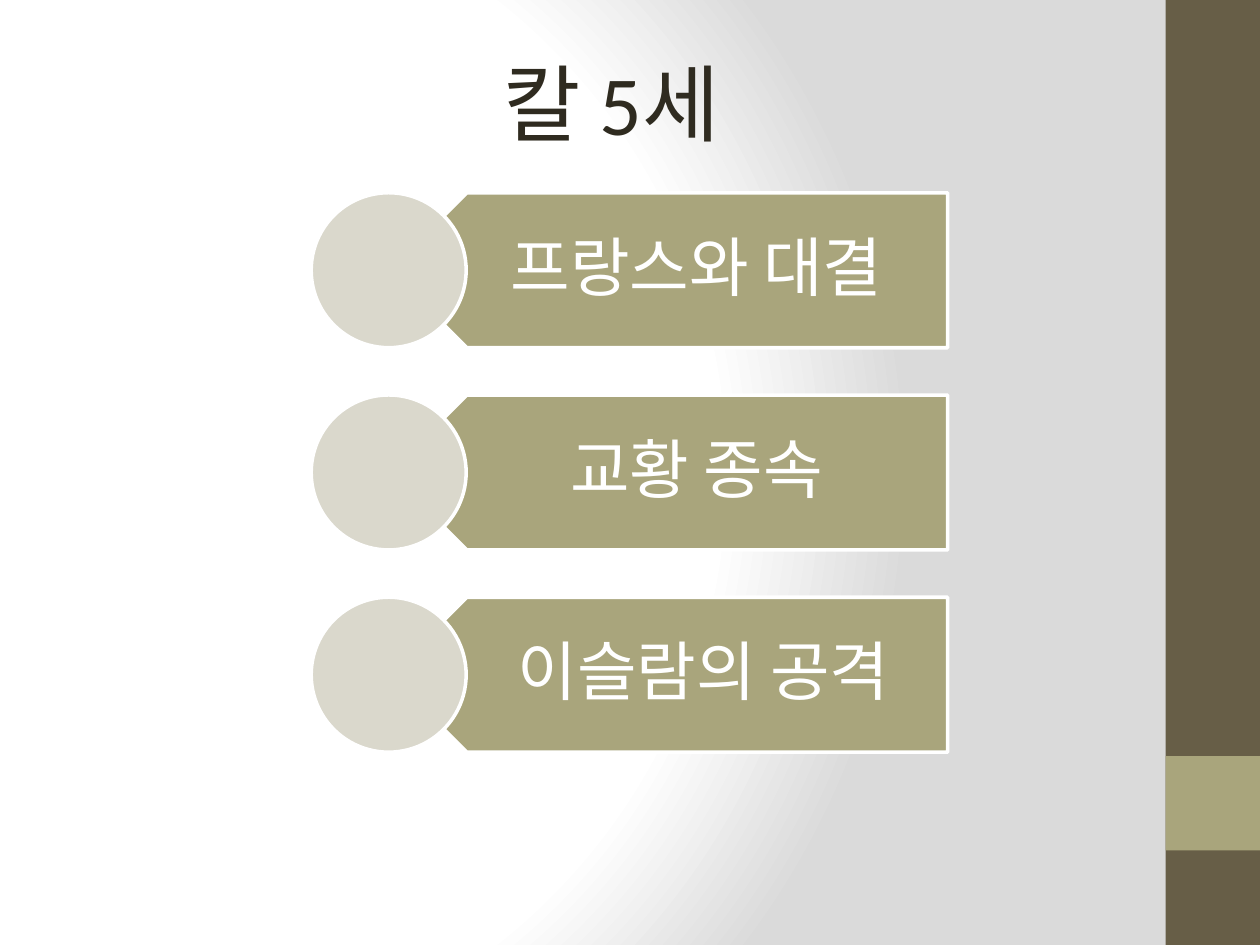
from pptx import Presentation
from pptx.dml.color import RGBColor
from pptx.enum.shapes import MSO_SHAPE
from pptx.enum.text import MSO_ANCHOR, MSO_AUTO_SIZE, PP_ALIGN
from pptx.oxml import parse_xml
from pptx.oxml.ns import nsdecls
from pptx.util import Inches, Pt

RECTANGLE = MSO_SHAPE.RECTANGLE
PENTAGON = MSO_SHAPE.PENTAGON
OVAL = MSO_SHAPE.OVAL
MIDDLE = MSO_ANCHOR.MIDDLE
CENTER = PP_ALIGN.CENTER

WHITE = RGBColor(0xFF, 0xFF, 0xFF)
GRAY = RGBColor(0xDA, 0xDA, 0xDA)
BROWN = RGBColor(0x67, 0x5E, 0x47)
OLIVE = RGBColor(0xA9, 0xA5, 0x7C)
PALE = RGBColor(0xDA, 0xD8, 0xCC)
DARK = RGBColor(0x2F, 0x2B, 0x20)

TOPICS = ["프랑스와 대결 ", "교황 종속 ", "이슬람의 공격"]
FIRST_TOP, ROW_STEP, ROW_HEIGHT = 1.53, 1.605, 1.23


class SlideBuilder:
    font = "Calibri"

    def __init__(self, page):
        self.page = page

    def radial_background(self, stops):
        """Fill the background with a circular gradient of (percent, colour) stops."""
        self.page.background.fill.solid()
        solid = self.page.element.xpath(".//p:bgPr/a:solidFill")[0]
        stop_xml = "".join(
            f'<a:gs pos="{percent * 1000}"><a:srgbClr val="{color}"/></a:gs>'
            for percent, color in stops
        )
        gradient = parse_xml(
            f'<a:gradFill {nsdecls("a")} rotWithShape="1"><a:gsLst>{stop_xml}</a:gsLst>'
            '<a:path path="circle">'
            '<a:fillToRect l="20000" t="50000" r="100000" b="50000"/>'
            "</a:path></a:gradFill>"
        )
        solid.getparent().replace(solid, gradient)

    def shape(self, kind, left, top, width, height, fill, outline=None):
        shape = self.page.shapes.add_shape(
            kind, Inches(left), Inches(top), Inches(width), Inches(height)
        )
        shape.shadow.inherit = False
        shape.fill.solid()
        shape.fill.fore_color.rgb = fill
        if outline is None:
            shape.line.fill.background()
        else:
            shape.line.color.rgb = outline
            shape.line.width = Pt(2)
        return shape

    def text(self, words, left, top, width, height, size, color):
        box = self.page.shapes.add_textbox(
            Inches(left), Inches(top), Inches(width), Inches(height)
        )
        frame = box.text_frame
        frame.word_wrap = True
        frame.text = words
        font = frame.paragraphs[0].runs[0].font
        font.name = self.font
        font.size = Pt(size)
        font.color.rgb = color
        return frame

    def topic(self, words, top):
        """Add a left-pointing banner with its label and a circle over the tip."""
        banner = self.shape(PENTAGON, 3.09, top, 4.43, ROW_HEIGHT, OLIVE, WHITE)
        banner.rotation = 180
        frame = self.text(words, 3.4, top, 4.12, ROW_HEIGHT, 37, WHITE)
        frame.vertical_anchor = MIDDLE
        frame.margin_left, frame.margin_right = Inches(0.54), Inches(0.29)
        frame.margin_top = frame.margin_bottom = Inches(0.15)
        para = frame.paragraphs[0]
        para.alignment = CENTER
        para.line_spacing = 0.9
        self.shape(OVAL, 2.47, top, ROW_HEIGHT, ROW_HEIGHT, PALE, WHITE)


def main():
    deck = Presentation()
    deck.slide_width, deck.slide_height = Inches(10), Inches(7.5)
    builder = SlideBuilder(deck.slides.add_slide(deck.slide_layouts[6]))

    builder.radial_background([(0, WHITE), (75, WHITE), (100, GRAY)])
    builder.shape(RECTANGLE, 9.25, 0, 0.75, 7.5, BROWN)
    builder.shape(RECTANGLE, 9.25, 6, 0.75, 0.75, OLIVE)

    for row, words in enumerate(TOPICS):
        builder.topic(words, FIRST_TOP + row * ROW_STEP)

    title = builder.text("칼 5세", 3.9, 0.36, 3.78, 0.91, 48, DARK)
    title.auto_size = MSO_AUTO_SIZE.SHAPE_TO_FIT_TEXT

    deck.save("out.pptx")


if __name__ == "__main__":
    main()
